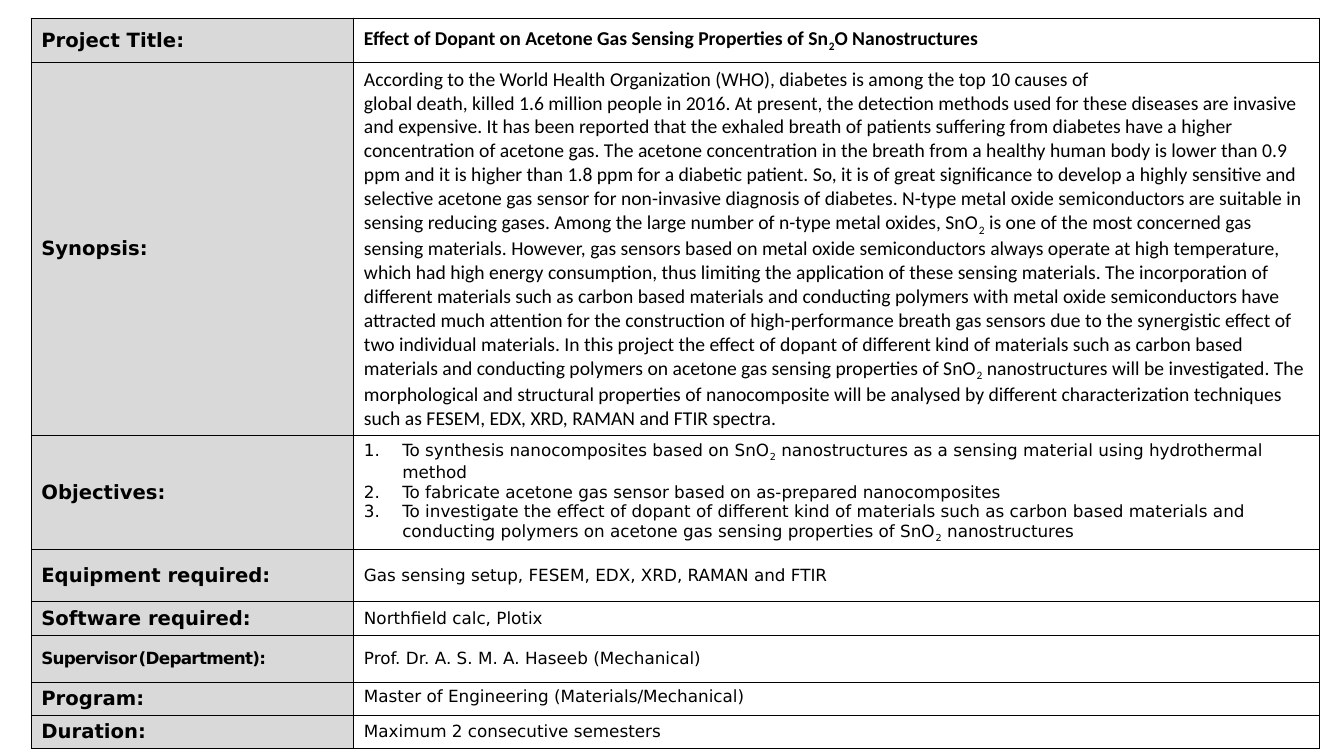
from lxml import etree
from pptx import Presentation
from pptx import util as u
from pptx.dml.color import RGBColor
from pptx.enum import text
from pptx.oxml import ns

BLACK, GREY = "000000", "D9D9D9"
SANS, CALIBRI = "DejaVu Sans", "Calibri"
COLUMN_WIDTHS = (3.2, 9.58)

# Text between tildes is set as a subscript.
TITLE = "Effect of Dopant on Acetone Gas Sensing Properties of Sn~2~O Nanostructures"
SYNOPSIS_OPENING = (
    "According to the World Health Organization (WHO), diabetes is among the top 10 causes of")
SYNOPSIS_SENTENCES = [
    "global death, killed 1.6 million people in 2016.",
    "At present, the detection methods used for these diseases are invasive and expensive.",
    "It has been reported that the exhaled breath of patients suffering from diabetes have a "
    "higher concentration of acetone gas.",
    "The acetone concentration in the breath from a healthy human body is lower than 0.9 ppm and "
    "it is higher than 1.8 ppm for a diabetic patient.",
    "So, it is of great significance to develop a highly sensitive and selective acetone gas "
    "sensor for non-invasive diagnosis of diabetes.",
    "N-type metal oxide semiconductors are suitable in sensing reducing gases.",
    "Among the large number of n-type metal oxides, SnO~2~ is one of the most concerned gas "
    "sensing materials.",
    "However, gas sensors based on metal oxide semiconductors always operate at high temperature, "
    "which had high energy consumption, thus limiting the application of these sensing materials.",
    "The incorporation of different materials such as carbon based materials and conducting "
    "polymers with metal oxide semiconductors have attracted much attention for the construction "
    "of high-performance breath gas sensors due to the synergistic effect of two individual "
    "materials.",
    "In this project the effect of dopant of different kind of materials such as carbon based "
    "materials and conducting polymers on acetone gas sensing properties of SnO~2~ "
    "nanostructures will be investigated.",
    "The morphological and structural properties of nanocomposite will be analysed by different "
    "characterization techniques such as FESEM, EDX, XRD, RAMAN and FTIR spectra.",
]
SYNOPSIS = [SYNOPSIS_OPENING, " ".join(SYNOPSIS_SENTENCES)]
OBJECTIVES = [
    "To synthesis nanocomposites based on SnO~2~ nanostructures as a sensing material using "
    "hydrothermal method",
    "To fabricate acetone gas sensor based on as-prepared nanocomposites",
    "To investigate the effect of dopant of different kind of materials such as carbon based "
    "materials and conducting polymers on acetone gas sensing properties of SnO~2~ nanostructures",
]

# label, row height, paragraphs, format that differs from the usual
ROWS = [
    ("Project Title:", 0.44, [TITLE], dict(font=CALIBRI, size=14, bold=True)),
    ("Synopsis:", 3.28, SYNOPSIS, dict(font=CALIBRI, size=14)),
    ("Objectives:", 0.96, OBJECTIVES, dict(numbered=True)),
    ("Equipment required:", 0.52, ["Gas sensing setup, FESEM, EDX, XRD, RAMAN and FTIR"], {}),
    ("Software required:", 0.34, ["Northfield calc, Plotix"], {}),
    ("Supervisor (Department):", 0.46, ["Prof. Dr. A. S. M. A. Haseeb (Mechanical)"], {}),
    ("Program:", 0.3, ["Master of Engineering (Materials/Mechanical)"], dict(top=True)),
    ("Duration:", 0.3, ["Maximum 2 consecutive semesters"], {}),
]


def rgb(color):
    return RGBColor.from_string(color)


def format_run(run, font, size, bold):
    run.font.name, run.font.size, run.font.bold = font, u.Pt(size), bold
    run.font.color.rgb = rgb(BLACK)


def add_border(cell):
    properties = cell._tc.get_or_add_tcPr()
    for side in ("lnL", "lnR", "lnT", "lnB"):
        line = etree.SubElement(properties, ns.qn(f"a:{side}"), w=str(u.Pt(1)))
        fill = etree.SubElement(line, ns.qn("a:solidFill"))
        etree.SubElement(fill, ns.qn("a:srgbClr"), val=BLACK)


def number_paragraph(paragraph):
    properties = paragraph._p.get_or_add_pPr()
    properties.set("marL", str(u.Inches(0.38)))
    properties.set("indent", str(u.Inches(-0.38)))
    etree.SubElement(properties, ns.qn("a:buAutoNum"), type="arabicPeriod")


def fill_cell(cell, paragraphs, font=SANS, size=12, bold=False, numbered=False, top=False):
    cell.vertical_anchor = text.MSO_ANCHOR.TOP if top else text.MSO_ANCHOR.MIDDLE
    frame = cell.text_frame
    for index, wording in enumerate(paragraphs):
        paragraph = frame.add_paragraph() if index else frame.paragraphs[0]
        if numbered:
            number_paragraph(paragraph)
        for part, piece in enumerate(wording.split("~")):
            run = paragraph.add_run()
            run.text = piece
            format_run(run, font, size, bold)
            if part % 2:
                run.font._element.set("baseline", "-25000")


def fill_supervisor_label(cell, label):
    """Set the label tighter and smaller, with a narrow gap, so it stays on one line."""
    cell.vertical_anchor = text.MSO_ANCHOR.MIDDLE
    cell.margin_right = 0
    first, second = label.split(" ")
    for piece, size in ((first, 12), (" ", 3), (second, 12)):
        run = cell.text_frame.paragraphs[0].add_run()
        run.text = piece
        format_run(run, SANS, size, True)
        run.font._element.set("spc", "-50")


def main():
    presentation = Presentation()
    presentation.slide_width, presentation.slide_height = u.Inches(13.33), u.Inches(7.5)
    slide = presentation.slides.add_slide(presentation.slide_layouts[6])
    table = slide.shapes.add_table(
        len(ROWS), 2, u.Inches(0.31), u.Inches(0.18),
        u.Inches(sum(COLUMN_WIDTHS)), u.Inches(sum(row[1] for row in ROWS))).table
    table.first_row = table.horz_banding = False
    for column, width in zip(table.columns, COLUMN_WIDTHS):
        column.width = u.Inches(width)

    for index, (label, height, paragraphs, style) in enumerate(ROWS):
        table.rows[index].height = u.Inches(height)
        label_cell, detail_cell = table.cell(index, 0), table.cell(index, 1)
        for cell in (label_cell, detail_cell):
            add_border(cell)
        label_cell.fill.solid()
        label_cell.fill.fore_color.rgb = rgb(GREY)
        detail_cell.fill.background()
        if label.startswith("Supervisor"):
            fill_supervisor_label(label_cell, label)
        else:
            fill_cell(label_cell, [label], size=14, bold=True)
        fill_cell(detail_cell, paragraphs, **style)

    presentation.save("out.pptx")


if __name__ == "__main__":
    main()
